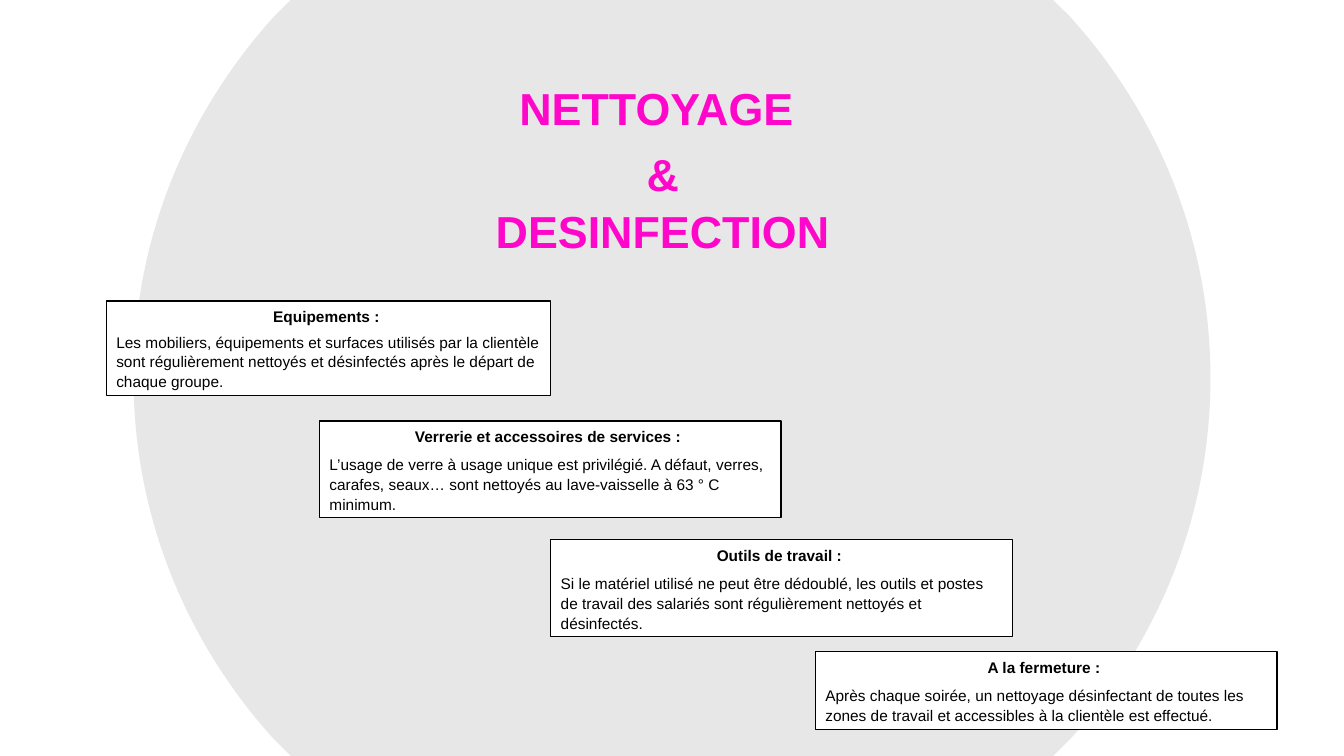
from dataclasses import dataclass

from lxml import etree
from pptx import Presentation
from pptx.dml.color import RGBColor
from pptx.enum.shapes import MSO_SHAPE
from pptx.enum.text import MSO_ANCHOR, MSO_AUTO_SIZE, PP_ALIGN
from pptx.oxml.ns import qn
from pptx.slide import Slide
from pptx.text.text import TextFrame
from pptx.util import Emu, Pt

RECTANGLE = MSO_SHAPE.RECTANGLE
TOP = MSO_ANCHOR.TOP
GROW = MSO_AUTO_SIZE.SHAPE_TO_FIT_TEXT
CENTER = PP_ALIGN.CENTER
LEFT = PP_ALIGN.LEFT

EMU_PER_PX = 4572
SLIDE_WIDTH = 2667
SLIDE_HEIGHT = 1500
BLACK = "000000"
WHITE = "FFFFFF"
PINK = "FF06CB"
GREY = "D9D9D9"

Point = tuple[int, int]


@dataclass(frozen=True)
class Edge:
    end: Point
    controls: tuple[Point, ...] = ()


@dataclass(frozen=True)
class Rule:
    heading: str
    detail: str
    left: int
    top: int
    width: int
    height: int
    gap: float = 6


RIGHT_HALF = [
    Edge((2090, 0)),
    Edge((2124, 34)),
    Edge((2402, 750), ((2296, 224), (2402, 474))),
    Edge((2124, 1466), ((2402, 1026), (2296, 1276))),
    Edge((2090, 1500)),
]

RULES = [
    Rule(
        "Outils de travail : ",
        "Si le matériel utilisé ne peut être dédoublé, les outils et postes de travail "
        "des salariés sont régulièrement nettoyés et désinfectés.",
        1093, 1071, 916, 192,
    ),
    Rule(
        "Equipements : ",
        "Les mobiliers, équipements et surfaces utilisés par la clientèle sont "
        "régulièrement nettoyés et désinfectés après le départ de chaque groupe.",
        211, 597, 882, 188, 4.2,
    ),
    Rule(
        "Verrerie et accessoires de services : ",
        "L’usage de verre à usage unique est privilégié. A défaut, verres, carafes, "
        "seaux… sont nettoyés au lave-vaisselle à 63 ° C minimum.",
        634, 835, 916, 192,
    ),
    Rule(
        "A la fermeture : ",
        "Après chaque soirée, un nettoyage désinfectant de toutes les zones de travail "
        "et accessibles à la clientèle est effectué.",
        1618, 1293, 916, 154,
    ),
]


def px(length: int) -> Emu:
    return Emu(length * EMU_PER_PX)


def color(code: str) -> RGBColor:
    return RGBColor.from_string(code)


def write_pair(
    frame: TextFrame, first: str, second: str, size: int, ink: str,
    gap: float, second_bold: bool, second_align: PP_ALIGN,
) -> None:
    frame.word_wrap = True
    frame.auto_size = GROW
    frame.vertical_anchor = TOP
    frame.text = f"{first}\n{second}"
    styles = ((True, CENTER), (second_bold, second_align))
    for paragraph, (bold, alignment) in zip(frame.paragraphs, styles):
        paragraph.alignment = alignment
        paragraph.line_spacing = 1.07
        paragraph.space_after = Pt(gap)
        for run in paragraph.runs:
            run.font.name = "Arial"
            run.font.size = Pt(size)
            run.font.bold = bold
            run.font.color.rgb = color(ink)


def opposite(point: Point) -> Point:
    return SLIDE_WIDTH - point[0], SLIDE_HEIGHT - point[1]


def draw_disc(slide: Slide) -> None:
    left_half = [
        Edge(opposite(edge.end), tuple(opposite(control) for control in edge.controls))
        for edge in RIGHT_HALF
    ]
    start, *edges = RIGHT_HALF + left_half
    builder = slide.shapes.build_freeform(*start.end, scale=EMU_PER_PX)
    builder.add_line_segments([edge.end for edge in edges], close=True)
    disc = builder.convert_to_shape()
    left = min(edge.end[0] for edge in edges)
    for segment, edge in zip(list(disc.element.iter(qn("a:lnTo"))), edges):
        if edge.controls:
            segment.tag = qn("a:cubicBezTo")
        for position, (x, y) in enumerate(edge.controls):
            control = etree.Element(qn("a:pt"), x=str(x - left), y=str(y))
            segment.insert(position, control)
    disc.shadow.inherit = False
    disc.line.fill.background()
    disc.fill.solid()
    disc.fill.fore_color.rgb = color(GREY)
    tint = disc.element.spPr.find(qn("a:solidFill")).find(qn("a:srgbClr"))
    etree.SubElement(tint, qn("a:alpha")).set("val", "62000")


def draw_title(slide: Slide) -> None:
    title = slide.shapes.add_textbox(px(933), px(143), px(764), px(376))
    write_pair(title.text_frame, "NETTOYAGE ", "& DESINFECTION", 32, PINK, 6, True, CENTER)


def draw_rule(slide: Slide, rule: Rule) -> None:
    card = slide.shapes.add_shape(
        RECTANGLE, px(rule.left), px(rule.top), px(rule.width), px(rule.height)
    )
    card.shadow.inherit = False
    card.fill.solid()
    card.fill.fore_color.rgb = color(WHITE)
    card.line.color.rgb = color(BLACK)
    card.line.width = Pt(1)
    write_pair(
        card.text_frame, rule.heading, rule.detail, 11, BLACK, rule.gap, False, LEFT
    )


def main() -> None:
    deck = Presentation()
    deck.slide_width = px(SLIDE_WIDTH)
    deck.slide_height = px(SLIDE_HEIGHT)
    slide = deck.slides.add_slide(deck.slide_layouts[6])
    draw_disc(slide)
    for rule in RULES[:2]:
        draw_rule(slide, rule)
    draw_title(slide)
    for rule in RULES[2:]:
        draw_rule(slide, rule)
    deck.save("out.pptx")


if __name__ == "__main__":
    main()
